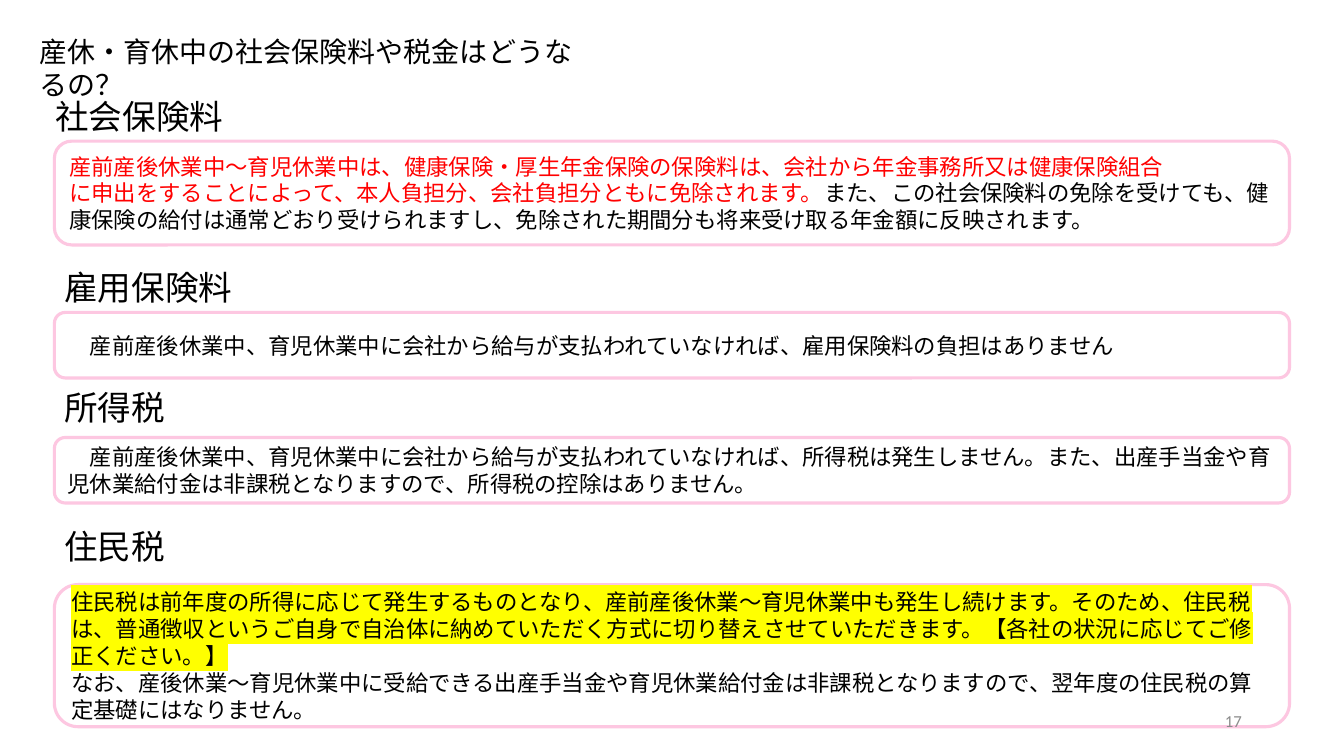
import dataclasses
import pptx
import pptx.dml.color
import pptx.enum.dml
import pptx.enum.shapes
import pptx.enum.text
import pptx.oxml
import pptx.oxml.ns
import pptx.util

WIDE, HIGH = pptx.util.Inches(13.33), pptx.util.Inches(7.5)
HUES = {"ink": "000000", "red": "FF0000", "pink": "FDC7E1", "mark": "FFFF00", "gray": "8C8C8C"}
SANS = "Noto Sans CJK JP"
LEFT, SPAN = 4.05, 91.9  # panel edge and width, % of slide width
HEAD = 6.67  # heading height, % of slide height


@dataclasses.dataclass
class Span:
    text: str
    hue: str = "ink"
    mark: bool = False
    size: int = 16
    font: str = SANS


@dataclasses.dataclass
class Part:
    """A heading and its panel; head, top and tall are % of slide height."""
    title: str
    head: float
    top: float
    tall: float
    lines: list[list[Span]]
    left: float = LEFT
    dent: int = 0


PARTS = [
    Part("社会保険料", 12, 18.67, 13.73, [
        [Span("産前産後休業中～育児休業中は、健康保険・厚生年金保険の保険料は、会社から年金事務所又は健康保険組合", "red")],
        [Span("に申出をすることによって、本人負担分、会社負担分ともに免除されます。", "red"),
         Span("また、この社会保険料の免除を受けても、健康保険の給付は通常どおり受けられますし、"
              "免除された期間分も将来受け取る年金額に反映されます。")],
    ], left=3.38),
    Part("雇用保険料", 34.67, 41.33, 8.67, [
        [Span("産前産後休業中、育児休業中に会社から給与が支払われていなければ、雇用保険料の負担はありません")],
    ], dent=16),
    Part("所得税", 50.53, 57.87, 8.67, [
        [Span("産前産後休業中、育児休業中に会社から給与が支払われていなければ、所得税は発生しません。"
              "また、出産手当金や育児休業給付金は非課税となりますので、所得税の控除はありません。")],
    ], dent=16),
    Part("住民税", 68.93, 77.33, 18.8, [
        [Span("住民税は前年度の所得に応じて発生するものとなり、産前産後休業～育児休業中も発生し続けます。"
              "そのため、住民税は、普通徴収というご自身で自治体に納めていただく方式に切り替えさせていただきます。"
              "【各社の状況に応じてご修正ください。】", mark=True)],
        [Span("なお、産後休業～育児休業中に受給できる出産手当金や育児休業給付金は非課税となりますので、"
              "翌年度の住民税の算定基礎にはなりません。")],
    ]),
]


def tint(name: str) -> pptx.dml.color.RGBColor:
    return pptx.dml.color.RGBColor.from_string(HUES[name])


def place(left: float, top: float, wide: float, tall: float) -> list[int]:
    """Turn shares of the slide, in percent, into lengths."""
    return [round(share * full / 100)
            for share, full in zip((left, top, wide, tall), (WIDE, HIGH, WIDE, HIGH))]


def style(run, span: Span) -> None:
    font = run.font
    font.size = pptx.util.Pt(span.size)
    font.color.rgb = tint(span.hue)
    font.name = span.font
    props = run._r.get_or_add_rPr()
    latin = props.find(pptx.oxml.ns.qn("a:latin"))
    space = pptx.oxml.ns.nsdecls("a")
    latin.addnext(pptx.oxml.parse_xml(f'<a:ea {space} typeface="{span.font}"/>'))
    if span.mark:
        latin.addprevious(pptx.oxml.parse_xml(
            f'<a:highlight {space}><a:srgbClr val="{HUES["mark"]}"/></a:highlight>'))


def write(shape, lines: list[list[Span]], wrap: bool = True, dent: int = 0, side: str = "LEFT") -> None:
    frame = shape.text_frame
    frame.text = "\n".join(line[0].text for line in lines)
    frame.word_wrap = wrap
    for para, line in zip(frame.paragraphs, lines):
        para.alignment = pptx.enum.text.PP_ALIGN[side]
        if dent:
            para._p.get_or_add_pPr().set("indent", str(pptx.util.Pt(dent)))
        for span in line[1:]:
            para.add_run().text = span.text
        for run, span in zip(para.runs, line):
            style(run, span)


def label(slide, area: list[int], span: Span, wrap: bool = False) -> None:
    box = slide.shapes.add_textbox(*area)
    write(box, [[span]], wrap)
    box.text_frame.auto_size = pptx.enum.text.MSO_AUTO_SIZE.SHAPE_TO_FIT_TEXT


def panel(slide, part: Part) -> None:
    box = slide.shapes.add_shape(pptx.enum.shapes.MSO_SHAPE.ROUNDED_RECTANGLE,
                                 *place(LEFT, part.top, SPAN, part.tall))
    box.shadow.inherit = False
    box.fill.background()
    box.line.color.rgb = tint("pink")
    box.line.width = pptx.util.Pt(2.25)
    box.text_frame.vertical_anchor = pptx.enum.text.MSO_ANCHOR.MIDDLE
    write(box, part.lines, dent=part.dent)


def main() -> None:
    deck = pptx.Presentation()
    deck.slide_width, deck.slide_height = WIDE, HIGH
    slide = deck.slides.add_slide(deck.slide_layouts[6])
    label(slide, place(2.18, 3.87, 43.05, 5.87),
          Span("産休・育休中の社会保険料や税金はどうなるの？", size=20), wrap=True)
    for part in PARTS:
        wide = len(part.title) * 2.5 + 1.6
        label(slide, place(part.left, part.head, wide, HEAD), Span(part.title, size=24))
        panel(slide, part)
    page = slide.shapes.add_textbox(*place(70.65, 92.67, 22.5, 5.33))
    page.text_frame.vertical_anchor = pptx.enum.text.MSO_ANCHOR.MIDDLE
    write(page, [[Span("17", "gray", size=12, font="Calibri")]], side="RIGHT")
    deck.save("out.pptx")


if __name__ == "__main__":
    main()
